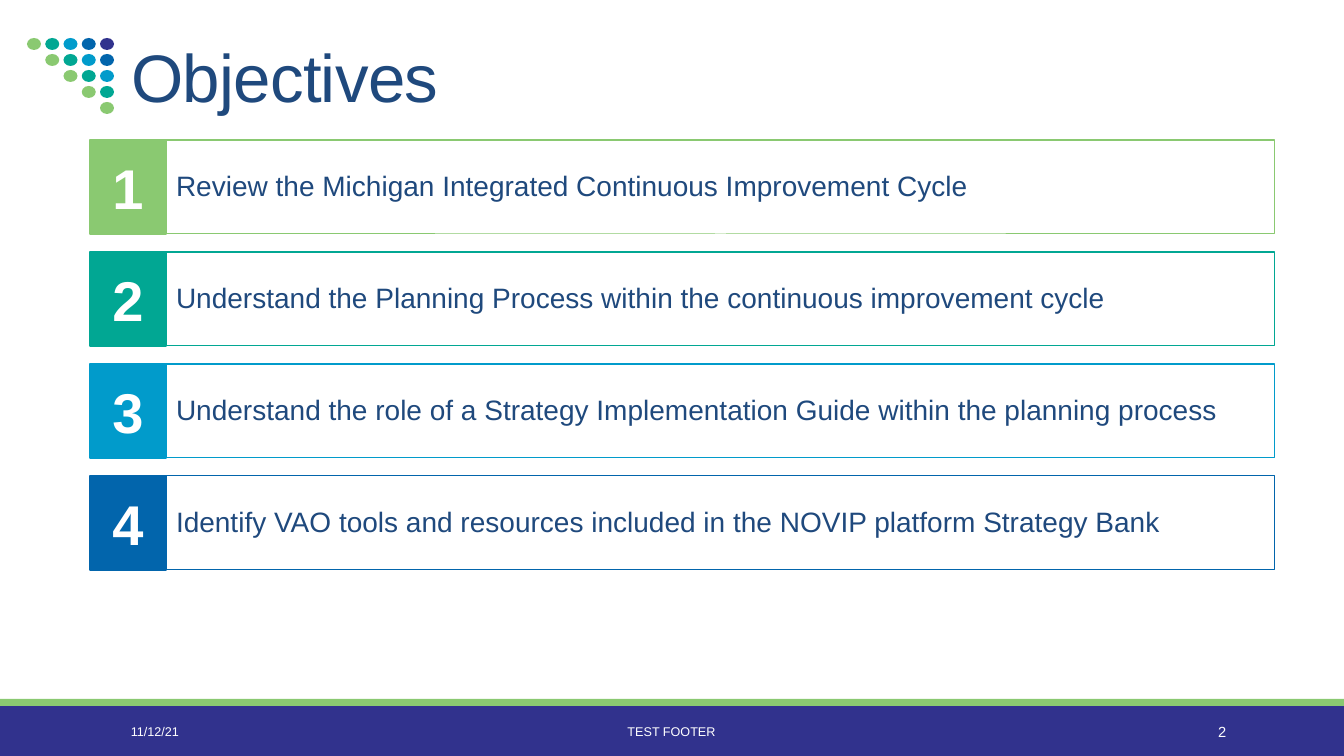
from pptx import Presentation
from pptx import util as u
from pptx.dml.color import RGBColor
from pptx.enum import shapes, text

PX = 914400 / 100.8
FONT = "Arial"
WHITE = RGBColor(0xFF, 0xFF, 0xFF)
NAVY = RGBColor(0x1F, 0x49, 0x7D)
GREEN = RGBColor(0x8A, 0xC9, 0x71)
TEAL = RGBColor(0x01, 0xA7, 0x93)
SKY = RGBColor(0x01, 0x9B, 0xCB)
BLUE = RGBColor(0x02, 0x65, 0xAC)
INDIGO = RGBColor(0x31, 0x32, 0x8D)
PALETTE = [GREEN, TEAL, SKY, BLUE, INDIGO]

OBJECTIVES = [
    "Review the Michigan Integrated Continuous Improvement Cycle",
    "Understand the Planning Process within the continuous improvement cycle",
    "Understand the role of a Strategy Implementation Guide within the planning process",
    "Identify VAO tools and resources included in the NOVIP platform Strategy Bank",
]


def px(length):
    return u.Emu(round(length * PX))


def add_box(slide, kind, box, fill=None, line=None, line_width=0.75):
    shape = slide.shapes.add_shape(kind, *map(px, box))
    shape.shadow.inherit = False
    if fill is None:
        shape.fill.background()
    else:
        shape.fill.solid()
        shape.fill.fore_color.rgb = fill
    if line is None:
        shape.line.fill.background()
    else:
        shape.line.color.rgb = line
        shape.line.width = u.Pt(line_width)
    return shape


def write(shape, content, size, color, align=text.PP_ALIGN.LEFT,
          anchor=text.MSO_ANCHOR.MIDDLE, bold=False):
    frame = shape.text_frame
    frame.word_wrap = True
    frame.vertical_anchor = anchor
    paragraph = frame.paragraphs[0]
    paragraph.alignment = align
    run = paragraph.add_run()
    run.text = content
    run.font.name = FONT
    run.font.size = u.Pt(size)
    run.font.bold = bold
    run.font.color.rgb = color
    return paragraph


def add_dot_triangle(slide, left, top, width, height):
    dot_width, dot_height = 14, 12
    count = len(PALETTE)
    step_x = (width - dot_width) / (count - 1)
    step_y = (height - dot_height) / (count - 1)
    for row in range(count):
        for column in range(row, count):
            box = (left + column * step_x, top + row * step_y, dot_width, dot_height)
            add_box(slide, shapes.MSO_SHAPE.OVAL, box, PALETTE[column - row])


def add_title(slide, left, top, width, height):
    title = slide.shapes.title
    title.left, title.top = px(left), px(top)
    title.width, title.height = px(width), px(height)
    paragraph = write(title, "Objectives", 48, NAVY, anchor=text.MSO_ANCHOR.BOTTOM)
    paragraph.line_spacing = 0.85
    paragraph.runs[0].font._element.set("spc", "-50")


def add_objective(slide, number, content, color, left, top, width, height):
    tile_width = 76
    panel = add_box(slide, shapes.MSO_SHAPE.RECTANGLE,
                    (left + tile_width, top, width - tile_width, height), line=color)
    paragraph = write(panel, content, 20, NAVY)
    paragraph.line_spacing = 0.9
    paragraph.space_before = u.Pt(12)
    paragraph.space_after = u.Pt(2)
    panel.text_frame.margin_left = px(10)
    panel.text_frame.margin_right = 0
    tile = add_box(slide, shapes.MSO_SHAPE.RECTANGLE,
                   (left, top, tile_width, height), color, color, 1.25)
    write(tile, str(number), 40, WHITE, text.PP_ALIGN.CENTER, bold=True)


def add_objectives(slide, left, top, width, height):
    row_height = 94
    pitch = (height - row_height) / (len(OBJECTIVES) - 1)
    for index, (content, color) in enumerate(zip(OBJECTIVES, PALETTE)):
        add_objective(slide, index + 1, content, color,
                      left, top + index * pitch, width, row_height)


def add_footer(slide, left, top, width, height):
    stripe = 7
    add_box(slide, shapes.MSO_SHAPE.RECTANGLE,
            (left, top + stripe, width, height - stripe), INDIGO)
    add_box(slide, shapes.MSO_SHAPE.RECTANGLE, (left, top, width, stripe), GREEN)
    entries = [
        ("11/12/21", 121, 272, 9, text.PP_ALIGN.LEFT),
        ("TEST FOOTER", 406, 531, 9, text.PP_ALIGN.CENTER),
        ("2", 1092, 144, 10.5, text.PP_ALIGN.RIGHT),
    ]
    for content, offset, entry_width, size, align in entries:
        entry = slide.shapes.add_textbox(px(left + offset), px(top + 13),
                                         px(entry_width), px(40))
        write(entry, content, size, WHITE, align)


def main():
    presentation = Presentation()
    presentation.slide_width = px(1344)
    presentation.slide_height = px(756)
    slide = presentation.slides.add_slide(presentation.slide_layouts[5])
    add_footer(slide, 0, 699, 1344, 57)
    add_dot_triangle(slide, 27, 38, 87, 76)
    add_title(slide, 121, 31, 1109, 90)
    add_objectives(slide, 90, 140, 1185, 430)
    presentation.save("out.pptx")


if __name__ == "__main__":
    main()
